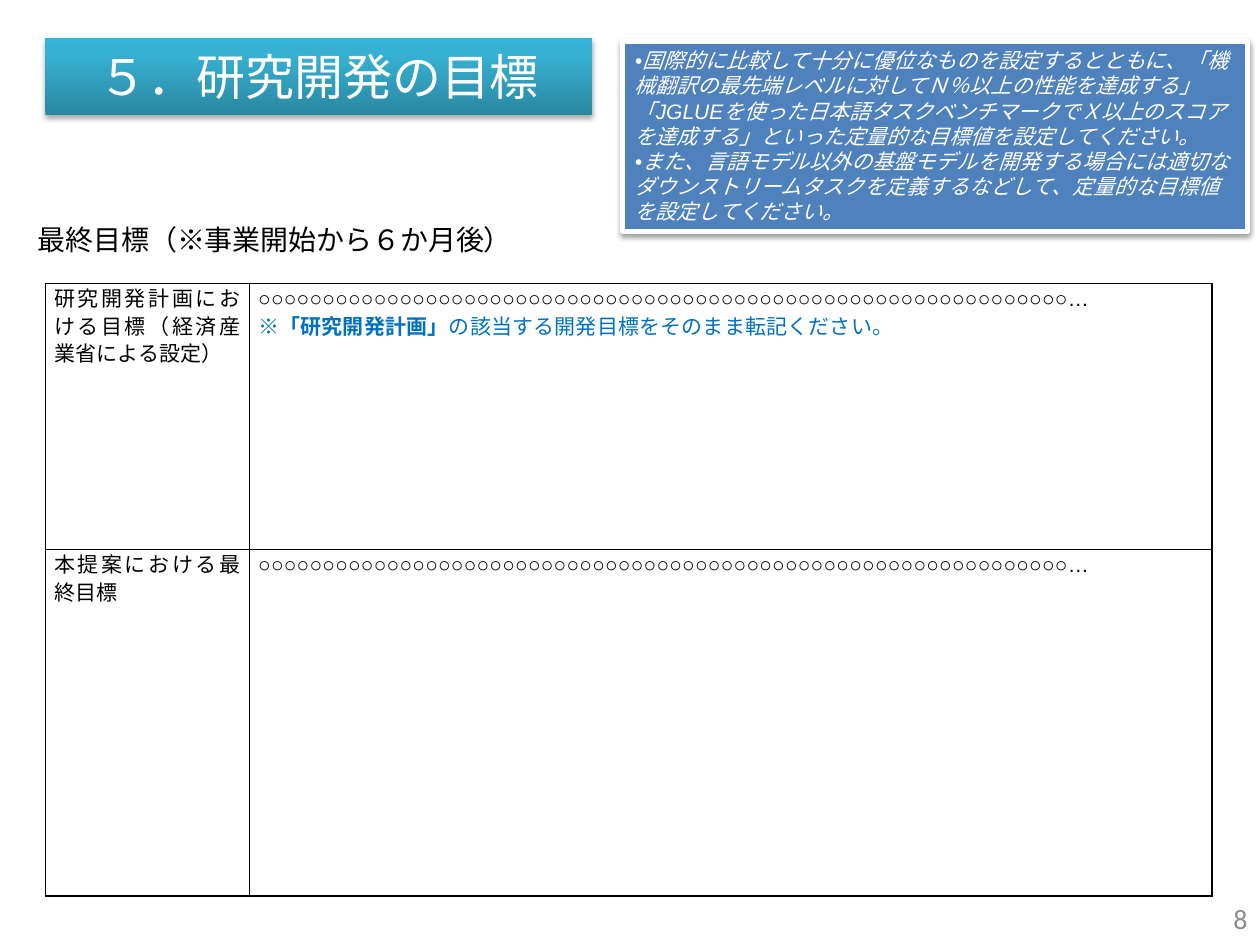
from dataclasses import dataclass

from lxml import etree
from pptx import Presentation
from pptx.dml.color import RGBColor
from pptx.enum.lang import MSO_LANGUAGE_ID
from pptx.enum.shapes import MSO_SHAPE
from pptx.enum.text import MSO_ANCHOR, PP_ALIGN
from pptx.oxml import parse_xml
from pptx.oxml.ns import nsdecls, qn
from pptx.util import Inches, Pt

RECT = MSO_SHAPE.RECTANGLE
TOP, MIDDLE = MSO_ANCHOR.TOP, MSO_ANCHOR.MIDDLE
LEFT, CENTER, RIGHT, JUSTIFY = PP_ALIGN.LEFT, PP_ALIGN.CENTER, PP_ALIGN.RIGHT, PP_ALIGN.JUSTIFY
JAPANESE = MSO_LANGUAGE_ID.JAPANESE

WHITE, BLACK, GREY = "FFFFFF", "000000", "8C8C8C"
CALLOUT_BLUE, NOTE_BLUE = "4F81BD", "0070C0"
TITLE_STOPS = ((0, "2A88A2"), (80, "37B1D2"), (100, "34B4D6"))
MARGIN_LEFT = 0.36


@dataclass
class Run:
    text: str
    color: str = BLACK
    size: float = 12
    font: str = "Arial"
    bold: bool = False
    italic: bool = False
    spacing: float = 0


@dataclass
class Box:
    left: float
    top: float
    width: float
    height: float
    paragraphs: list[list[Run]]
    align: PP_ALIGN = LEFT
    anchor: MSO_ANCHOR = TOP


def rgb(color: str) -> RGBColor:
    return RGBColor.from_string(color)


def write(tf, paragraphs: list[list[Run]], align: PP_ALIGN, line_spacing=None) -> None:
    for i, runs in enumerate(paragraphs):
        p = tf.paragraphs[0] if i == 0 else tf.add_paragraph()
        p.alignment = align
        p.line_spacing = line_spacing
        for run in runs:
            r = p.add_run()
            r.text = run.text
            formats = {"name": run.font, "size": Pt(run.size), "bold": run.bold,
                       "italic": run.italic, "language_id": JAPANESE}
            for name, value in formats.items():
                setattr(r.font, name, value)
            r.font.color.rgb = rgb(run.color)
            rPr = r.font._element
            if run.spacing:
                rPr.set("spc", str(round(run.spacing * 100)))
            ea = etree.Element(qn("a:ea"), typeface=run.font)
            rPr.find(qn("a:latin")).addnext(ea)


def place(shapes, box: Box, filled: bool = False):
    area = [Inches(v) for v in (box.left, box.top, box.width, box.height)]
    sp = shapes.add_shape(RECT, *area) if filled else shapes.add_textbox(*area)
    tf = sp.text_frame
    tf.word_wrap = True
    tf.vertical_anchor = box.anchor
    write(tf, box.paragraphs, box.align)
    return sp


def add_shadow(sp, alpha: int, blur: float, distance: float) -> None:
    """Give the shape a black shadow straight below it."""
    sp.shadow.inherit = False
    effects = sp._element.spPr.find(qn("a:effectLst"))
    effects.append(parse_xml(
        f'<a:outerShdw {nsdecls("a")} blurRad="{Pt(blur)}" dist="{Pt(distance)}" '
        f'dir="5400000" rotWithShape="0"><a:srgbClr val="{BLACK}">'
        f'<a:alpha val="{alpha * 1000}"/></a:srgbClr></a:outerShdw>'))


def fill_gradient(sp, stops) -> None:
    """Fill the shape from bottom to top."""
    sp.fill.gradient()
    sp.fill.gradient_angle = 90
    gs_list = sp._element.spPr.find(qn("a:gradFill")).find(qn("a:gsLst"))
    for gs in list(gs_list):
        gs_list.remove(gs)
    for position, color in stops:
        gs_list.append(parse_xml(
            f'<a:gs {nsdecls("a")} pos="{position * 1000}"><a:srgbClr val="{color}"/></a:gs>'))


def add_borders(cell, color: str, width: float) -> None:
    tcPr = cell._tc.get_or_add_tcPr()
    for i, side in enumerate(("lnL", "lnR", "lnT", "lnB")):
        tcPr.insert(i, parse_xml(
            f'<a:{side} {nsdecls("a")} w="{Pt(width)}"><a:solidFill>'
            f'<a:srgbClr val="{color}"/></a:solidFill></a:{side}>'))


def add_goal_table(shapes, rows, widths, heights) -> None:
    frame = shapes.add_table(len(rows), len(widths), Inches(MARGIN_LEFT), Inches(2.25),
                             Inches(sum(widths)), Inches(sum(heights)))
    table = frame.table
    table.first_row = table.horz_banding = False
    for column, width in zip(table.columns, widths):
        column.width = Inches(width)
    margins = {"margin_left": 0.07, "margin_right": 0.07, "margin_top": 0, "margin_bottom": 0}
    for i, (row, height) in enumerate(zip(rows, heights)):
        table.rows[i].height = Inches(height)
        for j, paragraphs in enumerate(row):
            cell = table.cell(i, j)
            for name, value in margins.items():
                setattr(cell, name, Inches(value))
            cell.fill.background()
            add_borders(cell, BLACK, 1)
            write(cell.text_frame, paragraphs, JUSTIFY, Pt(15.75))


def goal(text: str, color: str = BLACK, bold: bool = False) -> Run:
    return Run(text, color, bold=bold, spacing=0.1)


def hint(text: str) -> Run:
    return Run(text, WHITE, italic=True)


TITLE = Box(MARGIN_LEFT, 0.3, 4.34, 0.61, [[Run("５．研究開発の目標", WHITE, 28)]], CENTER, MIDDLE)
CALLOUT = Box(4.94, 0.33, 4.96, 1.51, [
    [hint("•国際的に比較して十分に優位なものを設定するとともに、「機械翻訳の最先端レベルに対して"
          "Ｎ％以上の性能を達成する」「JGLUEを使った日本語タスクベンチマークでＸ以上のスコアを"
          "達成する」といった定量的な目標値を設定してください。")],
    [hint("•また、言語モデル以外の基盤モデルを開発する場合には適切なダウンストリームタスクを"
          "定義するなどして、定量的な目標値を設定してください。")],
])
SUBTITLE = Box(0.2, 1.72, 9.42, 0.37, [[Run("最終目標（※事業開始から６か月後）", size=16)]])
PAGE_NUMBER = Box(7.67, 7.09, 2.33, 0.4, [[Run("8", GREY, 16, "Calibri")]], RIGHT, MIDDLE)

BLANK_GOAL = [goal("○" * 63 + "…")]
GOAL_ROWS = [
    [
        [[goal("研究開発計画における目標（経済産業省による設定）")]],
        [BLANK_GOAL, [goal("※", NOTE_BLUE), goal("「研究開発計画」", NOTE_BLUE, True),
                      goal("の該当する開発目標をそのまま転記ください。", NOTE_BLUE)]],
    ],
    [[[goal("本提案における最終目標")]], [BLANK_GOAL]],
]


def main() -> None:
    prs = Presentation()
    prs.slide_width, prs.slide_height = Inches(10), Inches(7.5)
    shapes = prs.slides.add_slide(prs.slide_layouts[6]).shapes

    title = place(shapes, TITLE, filled=True)
    fill_gradient(title, TITLE_STOPS)
    title.line.fill.background()
    add_shadow(title, 35, 3.1, 1.8)

    callout = place(shapes, CALLOUT, filled=True)
    callout.fill.solid()
    callout.fill.fore_color.rgb = rgb(CALLOUT_BLUE)
    callout.line.color.rgb = rgb(WHITE)
    callout.line.width = Pt(3)
    add_shadow(callout, 38, 3.1, 1.6)

    place(shapes, SUBTITLE)
    add_goal_table(shapes, GOAL_ROWS, widths=(1.62, 7.64), heights=(2.11, 2.75))
    place(shapes, PAGE_NUMBER)
    prs.save("out.pptx")


if __name__ == "__main__":
    main()
